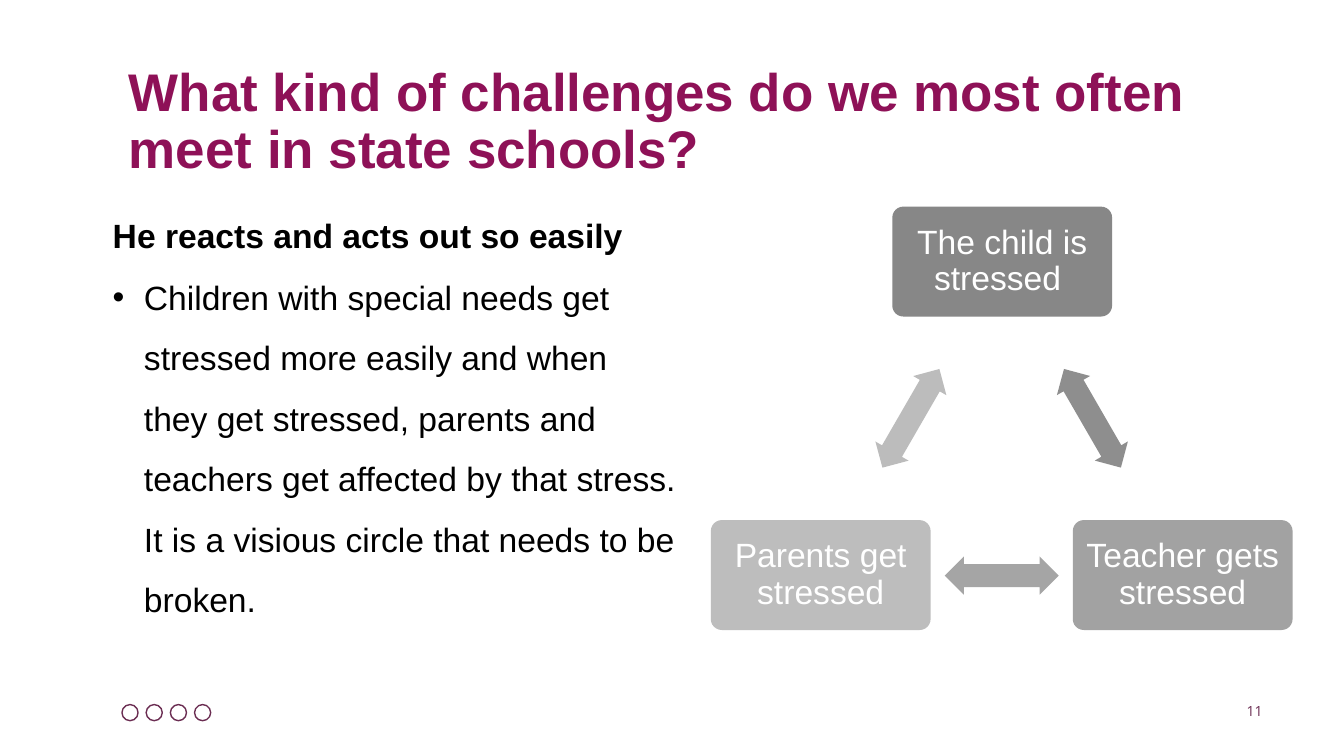
from lxml import etree
from pptx import Presentation
from pptx.dml.color import RGBColor
from pptx.enum.shapes import MSO_SHAPE
from pptx.enum.text import MSO_ANCHOR, PP_ALIGN
from pptx.oxml.ns import qn
from pptx.util import Inches, Pt

OVAL = MSO_SHAPE.OVAL
ROUNDED = MSO_SHAPE.ROUNDED_RECTANGLE
DOUBLE_ARROW = MSO_SHAPE.LEFT_RIGHT_ARROW
MIDDLE, BOTTOM = MSO_ANCHOR.MIDDLE, MSO_ANCHOR.BOTTOM
TOP = MSO_ANCHOR.TOP
LEFT, CENTER, RIGHT = PP_ALIGN.LEFT, PP_ALIGN.CENTER, PP_ALIGN.RIGHT

PLUM, MAGENTA, BLACK, WHITE = "6B2D52", "8E1157", "000000", "FFFFFF"

# Cycle: text, left, top, fill
NODES = [
    ("The child is stressed ", 8.85, 2.05, "878787"),
    ("Teacher gets stressed", 10.64, 5.16, "A2A2A2"),
    ("Parents get stressed", 7.05, 5.16, "BDBDBD"),
]
# Cycle: left, top, rotation, fill
ARROWS = [
    (10.27, 3.96, 60, "8E8E8E"),
    (9.37, 5.52, 180, "A5A5A5"),
    (8.47, 3.96, 300, "BCBCBC"),
]


def color(hex_code):
    return RGBColor.from_string(hex_code)


def style(paragraph, size, hex_code, bold=False, font="Arial",
          align=LEFT, spacing=1.0):
    paragraph.alignment = align
    paragraph.line_spacing = spacing
    paragraph.font.name = font
    paragraph.font.size = Pt(size)
    paragraph.font.bold = bold
    paragraph.font.color.rgb = color(hex_code)


def add_bullet(paragraph, indent):
    props = paragraph._p.get_or_add_pPr()
    props.set("marL", str(Inches(indent)))
    props.set("indent", str(-Inches(indent)))
    etree.SubElement(props, qn("a:buFont"), typeface="Arial")
    etree.SubElement(props, qn("a:buChar"), char="•")


def add_text(slide, left, top, width, height, text, anchor=TOP):
    box = slide.shapes.add_textbox(
        Inches(left), Inches(top), Inches(width), Inches(height))
    frame = box.text_frame
    frame.word_wrap = True
    frame.vertical_anchor = anchor
    frame.text = text
    return frame.paragraphs


def add_solid(slide, kind, left, top, width, height, fill):
    solid = slide.shapes.add_shape(
        kind, Inches(left), Inches(top), Inches(width), Inches(height))
    solid.shadow.inherit = False
    solid.fill.solid()
    solid.fill.fore_color.rgb = color(fill)
    solid.line.fill.background()
    return solid


def add_node(slide, text, left, top, fill):
    node = add_solid(slide, ROUNDED, left, top, 2.18, 1.09, fill)
    node.adjustments[0] = 0.1
    frame = node.text_frame
    frame.word_wrap = True
    frame.vertical_anchor = MIDDLE
    frame.margin_left = frame.margin_right = Inches(0.1)
    frame.text = text
    style(frame.paragraphs[0], 24, WHITE, align=CENTER, spacing=0.9)


def add_cycle_arrow(slide, left, top, rotation, fill):
    arrow = add_solid(slide, DOUBLE_ARROW, left, top, 1.13, 0.38, fill)
    arrow.adjustments[0] = 0.6
    arrow.adjustments[1] = 0.5
    arrow.rotation = rotation


def add_ring(slide, left):
    ring = add_solid(slide, OVAL, left, 6.99, 0.16, 0.16, WHITE)
    ring.fill.background()
    ring.line.color.rgb = color(PLUM)
    ring.line.width = Pt(1)


def main():
    prs = Presentation()
    prs.slide_width, prs.slide_height = Inches(13.33), Inches(7.5)
    slide = prs.slides.add_slide(prs.slide_layouts[6])

    # Footer rings
    for index in range(4):
        add_ring(slide, 1.21 + 0.24 * index)

    # Title
    title, = add_text(
        slide, 1.18, 0.6, 11.02, 1.33,
        "What kind of challenges do we most often meet in state schools?")
    style(title, 37.8, MAGENTA, bold=True, spacing=0.9)

    # Body
    lead, explanation = add_text(
        slide, 1.02, 1.88, 5.8, 4.81,
        "He reacts and acts out so easily\n"
        "Children with special needs get stressed more easily and when they "
        "get stressed, parents and teachers get affected by that stress. "
        "It is a visious circle that needs to be broken.")
    style(lead, 24, BLACK, bold=True, spacing=1.5)
    add_bullet(explanation, 0.31)
    style(explanation, 24, BLACK, spacing=1.5)
    explanation.space_before = Pt(1)

    # Page number
    page_number, = add_text(slide, 11.74, 6.79, 0.88, 0.4, "11", BOTTOM)
    style(page_number, 10, PLUM, font="Open Sans", align=RIGHT)

    # Stress cycle
    for node in NODES:
        add_node(slide, *node)
    for arrow in ARROWS:
        add_cycle_arrow(slide, *arrow)

    prs.save("out.pptx")


if __name__ == "__main__":
    main()
